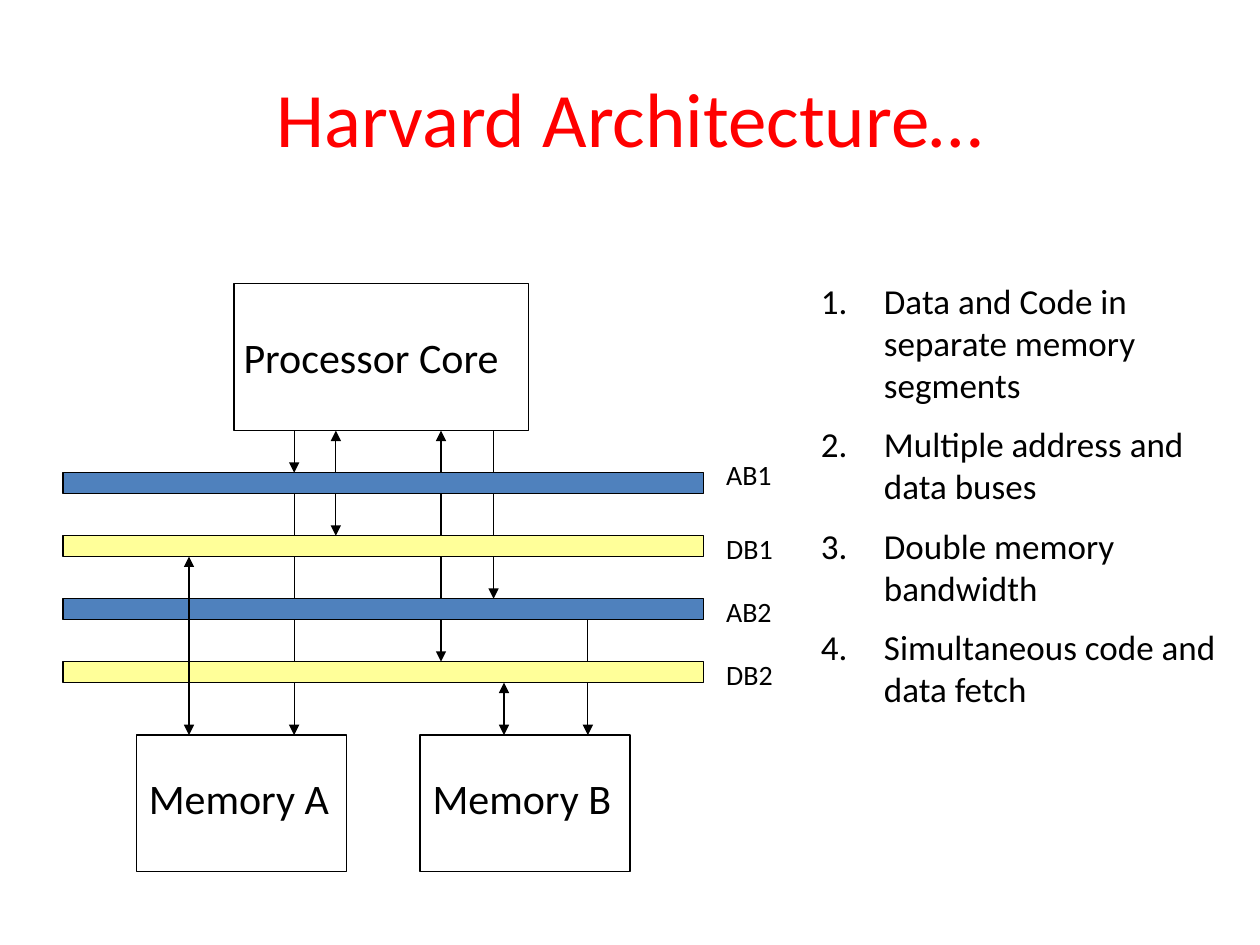
from lxml.etree import SubElement
from pptx import Presentation
from pptx.dml.color import RGBColor
from pptx.enum.shapes import MSO_CONNECTOR as Connector, MSO_SHAPE as Preset
from pptx.enum.text import MSO_ANCHOR as Anchor, PP_ALIGN as Align
from pptx.oxml.ns import qn
from pptx.util import Cm, Pt

BLACK = RGBColor(0x00, 0x00, 0x00)
RED = RGBColor(0xFF, 0x00, 0x00)
BLUE = RGBColor(0x4F, 0x81, 0xBD)
YELLOW = RGBColor(0xFF, 0xFF, 0x99)

TITLE_ONLY = 5
CORE_BOTTOM = 8.68
MEMORY_TOP = 14.82
BUS_LEFT, BUS_TOP, BUS_STEP = 1.27, 9.53, 1.27
BUS_WIDTH, BUS_HEIGHT = 12.91, 0.42


class Diagram:
    """Style and current slide, with one method per kind of element."""

    font = "Calibri"
    line_width = Pt(0.75)

    def __init__(self, slide):
        self.slide = slide

    def run(self, paragraph, text, size, color=BLACK):
        run = paragraph.add_run()
        run.text = text
        run.font.name = self.font
        run.font.size = Pt(size)
        run.font.color.rgb = color

    def title(self, text):
        title = self.slide.shapes.title
        title.left, title.top, title.width, title.height = Cm(1.27), Cm(0.76), Cm(22.86), Cm(3.18)
        title.text_frame.vertical_anchor = Anchor.MIDDLE
        paragraph = title.text_frame.paragraphs[0]
        paragraph.alignment = Align.CENTER
        self.run(paragraph, text, 44, RED)

    def text(self, left, top, width, height, text, size, wrap=True, shapes=None):
        shapes = shapes or self.slide.shapes
        box = shapes.add_textbox(Cm(left), Cm(top), Cm(width), Cm(height))
        box.text_frame.word_wrap = wrap
        self.run(box.text_frame.paragraphs[0], text, size)

    def rectangle(self, left, top, width, height, fill=None, shapes=None):
        shapes = shapes or self.slide.shapes
        shape = shapes.add_shape(Preset.RECTANGLE, Cm(left), Cm(top), Cm(width), Cm(height))
        shape.shadow.inherit = False
        if fill is None:
            shape.fill.background()
        else:
            shape.fill.solid()
            shape.fill.fore_color.rgb = fill
        shape.line.color.rgb = BLACK
        shape.line.width = self.line_width

    def block(self, text, text_area, frame):
        group = self.slide.shapes.add_group_shape()
        self.text(*text_area, text, 24, shapes=group.shapes)
        self.rectangle(*frame, shapes=group.shapes)

    def arrow(self, x, start, end, both=False):
        connector = self.slide.shapes.add_connector(
            Connector.STRAIGHT, Cm(x), Cm(start), Cm(x), Cm(end))
        connector.line.color.rgb = BLACK
        connector.line.width = self.line_width
        line = connector.line._get_or_add_ln()
        for tag in ("a:headEnd", "a:tailEnd") if both else ("a:tailEnd",):
            SubElement(line, qn(tag), type="triangle")
        SubElement(connector._element.spPr, qn("a:effectLst"))

    def numbered_list(self, left, top, width, height, items):
        box = self.slide.shapes.add_textbox(Cm(left), Cm(top), Cm(width), Cm(height))
        frame = box.text_frame
        frame.word_wrap = True
        for index, item in enumerate(items):
            paragraph = frame.add_paragraph() if index else frame.paragraphs[0]
            if index:
                paragraph.space_before = Pt(10)
            properties = paragraph._p.get_or_add_pPr()
            properties.set("marL", str(Cm(1.27)))
            properties.set("indent", str(-Cm(1.27)))
            SubElement(properties, qn("a:buFont"), typeface="+mj-lt")
            SubElement(properties, qn("a:buAutoNum"), type="arabicPeriod")
            self.run(paragraph, item, 20)


def main():
    presentation = Presentation()
    presentation.slide_width, presentation.slide_height = Cm(25.4), Cm(19.05)
    slide = presentation.slides.add_slide(presentation.slide_layouts[TITLE_ONLY])
    diagram = Diagram(slide)
    diagram.title("Harvard Architecture…")

    buses = [("AB1", BLUE), ("DB1", YELLOW), ("AB2", BLUE), ("DB2", YELLOW)]
    ab1, db1, ab2, db2 = [BUS_TOP + index * BUS_STEP for index in range(len(buses))]

    # Arrows that pass behind the buses
    diagram.arrow(8.89, db2, CORE_BOTTOM, both=True)
    diagram.arrow(6.77, db1, CORE_BOTTOM, both=True)
    diagram.arrow(9.95, CORE_BOTTOM, ab2)
    diagram.arrow(5.93, ab1 + BUS_HEIGHT, MEMORY_TOP)
    diagram.arrow(11.85, ab2 + BUS_HEIGHT, MEMORY_TOP)

    # Processor and memories
    diagram.block("Processor Core", (4.66, 6.56, 6.15, 1.27), (4.72, 5.72, 5.93, 2.96))
    for name, left in (("Memory A", 2.75), ("Memory B", 8.47)):
        diagram.block(name, (left, 15.45, 4.66, 1.78), (left, MEMORY_TOP, 4.23, 2.75))

    # Buses with their labels
    for index, (name, color) in enumerate(buses):
        top = BUS_TOP + index * BUS_STEP
        diagram.rectangle(BUS_LEFT, top, BUS_WIDTH, BUS_HEIGHT, color)
        label_top = top - (0.43 if index == 0 else 0.21)
        diagram.text(14.39, label_top, 1.57, 0.94, name, 16, wrap=False)

    # Arrows in front of the buses
    diagram.arrow(5.93, CORE_BOTTOM, ab1)
    diagram.arrow(10.16, db2 + BUS_HEIGHT, MEMORY_TOP, both=True)
    diagram.arrow(3.81, db1 + BUS_HEIGHT, MEMORY_TOP, both=True)

    # Key features
    diagram.numbered_list(16.3, 5.5, 9.1, 9.14, [
        "Data and Code in separate memory segments",
        "Multiple address and data buses",
        "Double memory bandwidth",
        "Simultaneous code and data fetch",
    ])

    presentation.save("out.pptx")


if __name__ == "__main__":
    main()
